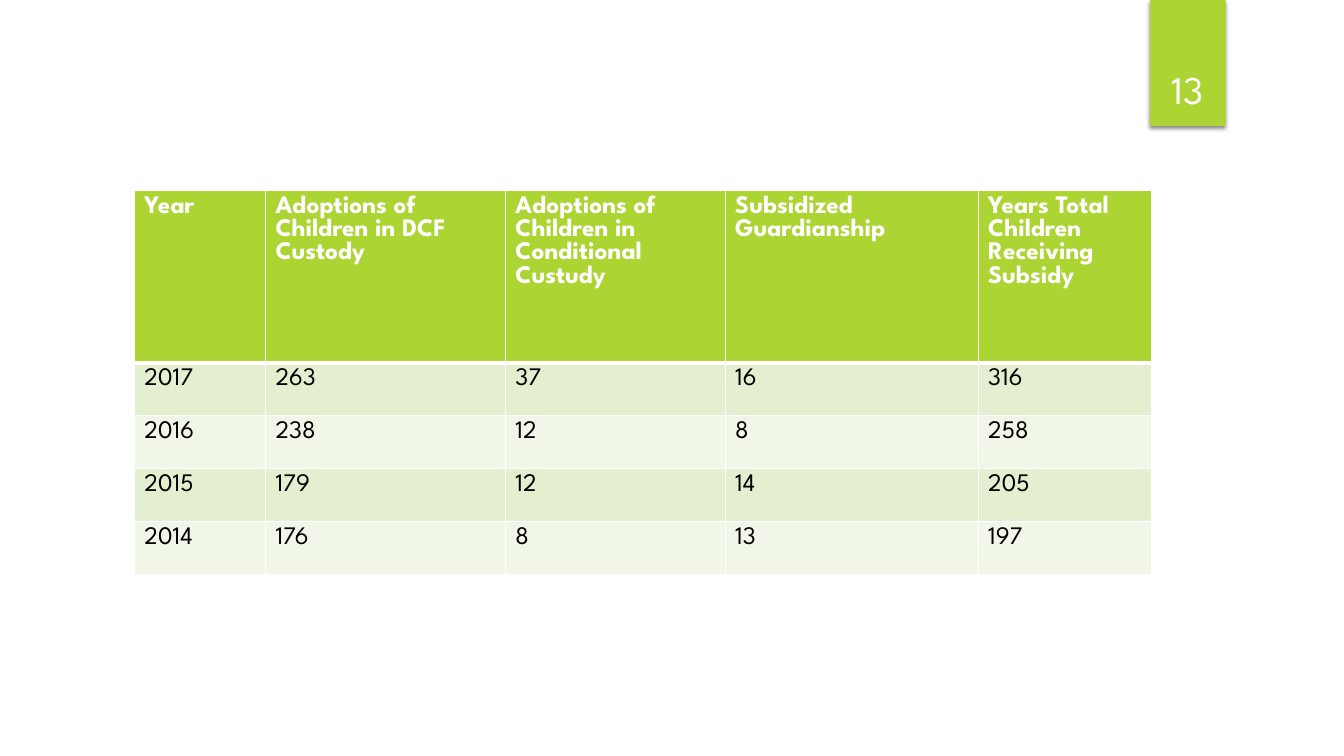
"""Build the slide with the yearly table of adoptions and guardianships."""
import pptx
import pptx.dml.color
import pptx.enum.shapes
import pptx.enum.text
import pptx.oxml
import pptx.util
from lxml import etree

Pt = pptx.util.Pt
FONT = "League Spartan"
GREEN, WHITE, BLACK = "ACD433", "FFFFFF", "000000"
BANDS = ["E3EFCE", "F1F7E8"]
NS = 'xmlns:a="http://schemas.openxmlformats.org/drawingml/2006/main"'

PAGE_NUMBER = "13"
HEADINGS = [
    "Year",
    "Adoptions of Children in DCF Custody",
    "Adoptions of Children in Conditional Custudy",
    "Subsidized Guardianship",
    "Years Total Children Receiving Subsidy",
]
YEARS = [
    (2017, 263, 37, 16, 316),
    (2016, 238, 12, 8, 258),
    (2015, 179, 12, 14, 205),
    (2014, 176, 8, 13, 197),
]
COLUMN_WIDTHS = [93.6, 171.4, 157, 180.7, 123.8]
ROW_HEIGHTS = [123.1] + [37.8] * len(YEARS)


def color(hex_code):
    return pptx.dml.color.RGBColor.from_string(hex_code)


def fill(target, hex_code):
    target.fill.solid()
    target.fill.fore_color.rgb = color(hex_code)


def write(frame, text, size, hex_code, bold=False):
    frame.text = text
    font = frame.paragraphs[0].runs[0].font
    font.name, font.size, font.bold = FONT, Pt(size), bold
    font.color.rgb = color(hex_code)


def border(cell, widths):
    properties = cell._tc.get_or_add_tcPr()
    for side, width in widths.items():
        properties.append(pptx.oxml.parse_xml(
            f'<a:ln{side} {NS} w="{Pt(width)}"><a:solidFill>'
            f'<a:srgbClr val="{WHITE}"/></a:solidFill></a:ln{side}>'))


def add_page_tab(slide):
    tab = slide.shapes.add_shape(
        pptx.enum.shapes.MSO_SHAPE.RECTANGLE, Pt(821.5), Pt(0), Pt(54), Pt(90))
    fill(tab, GREEN)
    tab.line.fill.background()
    tab.shadow.inherit = False
    effects = tab._element.spPr.find(pptx.oxml.ns.qn("a:effectLst"))
    effects.append(etree.fromstring(
        f'<a:outerShdw {NS} blurRad="{Pt(3)}" dist="{Pt(2)}" dir="5400000" rotWithShape="0">'
        f'<a:srgbClr val="{BLACK}"><a:alpha val="45000"/></a:srgbClr></a:outerShdw>'))

    number = slide.shapes.add_textbox(Pt(815), Pt(23), Pt(66.2), Pt(60.5)).text_frame
    number.word_wrap = True
    number.vertical_anchor = pptx.enum.text.MSO_ANCHOR.BOTTOM
    write(number, PAGE_NUMBER, 28, WHITE)
    number.paragraphs[0].alignment = pptx.enum.text.PP_ALIGN.CENTER


def add_adoption_table(slide):
    rows = [HEADINGS] + YEARS
    table = slide.shapes.add_table(
        len(rows), len(HEADINGS), Pt(96), Pt(136.2),
        Pt(sum(COLUMN_WIDTHS)), Pt(sum(ROW_HEIGHTS))).table
    for column, width in zip(table.columns, COLUMN_WIDTHS):
        column.width = Pt(width)
    for r, values in enumerate(rows):
        table.rows[r].height = Pt(ROW_HEIGHTS[r])
        heading = r == 0
        for c, value in enumerate(values):
            cell = table.cell(r, c)
            border(cell, {"L": 1, "R": 1, "T": 3 if r == 1 else 1, "B": 3 if heading else 1})
            fill(cell, GREEN if heading else BANDS[(r - 1) % 2])
            write(cell.text_frame, str(value), 18, WHITE if heading else BLACK, heading)


def main():
    deck = pptx.Presentation()
    deck.slide_width, deck.slide_height = Pt(960), Pt(540)
    slide = deck.slides.add_slide(deck.slide_layouts[6])
    add_page_tab(slide)
    add_adoption_table(slide)
    deck.save("out.pptx")


if __name__ == "__main__":
    main()
